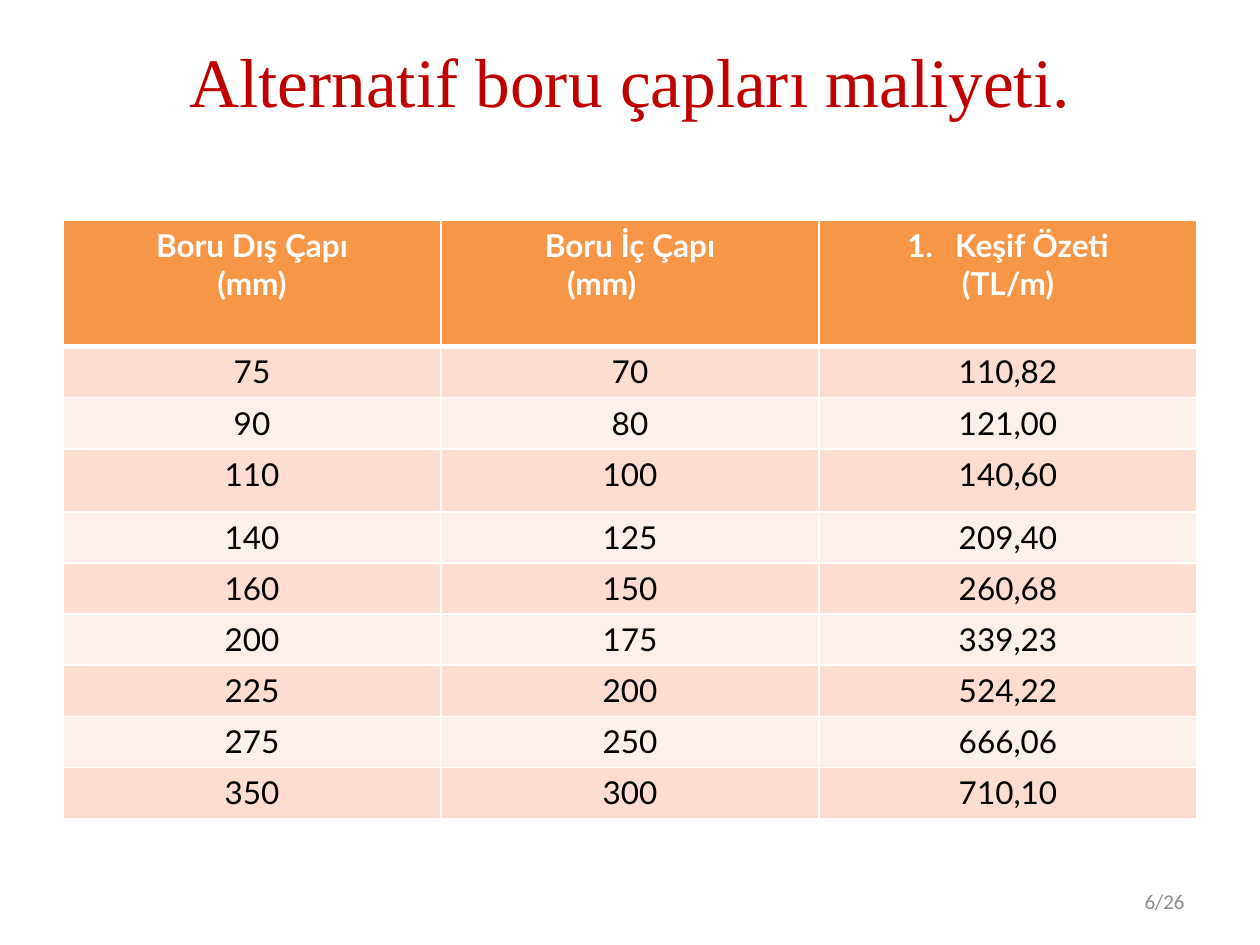
from lxml import etree
from pptx import Presentation, util as u
from pptx.dml.color import RGBColor
from pptx.enum import text
from pptx.oxml import ns

TITLE = "Alternatif boru çapları maliyeti."
PAGE = "6/26"
HEADERS = [
    ("Boru Dış Çapı", "(mm)"),
    ("Boru İç Çapı", "(mm)\t"),
    ("Keşif Özeti", "(TL/m)"),
]
COSTS = [
    ("75", "70", "110,82"),
    ("90", "80", "121,00"),
    ("110", "100", "140,60"),
    ("140", "125", "209,40"),
    ("160", "150", "260,68"),
    ("200", "175", "339,23"),
    ("225", "200", "524,22"),
    ("275", "250", "666,06"),
    ("350", "300", "710,10"),
]
COLORS = {
    "title": "C00000", "header": "F79646", "odd": "FCDDCF", "even": "FDEFE9",
    "white": "FFFFFF", "black": "000000", "page": "8C8C8C",
}
MARGIN, WIDTH = 0.5, 9
TABLE_TOP, TABLE_HEIGHT = 1.75, 4.75
HEADER_HEIGHT, TALL_ROW, TALL_HEIGHT = 1, 3, 0.5
ROW_HEIGHT = (TABLE_HEIGHT - HEADER_HEIGHT - TALL_HEIGHT) / (len(COSTS) - 1)


def rgb(name):
    return RGBColor.from_string(COLORS[name])


def style(p, size, font, color, align, bold=False):
    p.alignment = align
    p.font.size, p.font.name, p.font.bold = u.Pt(size), font, bold
    p.font.color.rgb = rgb(color)


def add_borders(cell, bottom):
    tc_pr = cell._tc.get_or_add_tcPr()
    for side, width in (("L", 1), ("R", 1), ("T", 1), ("B", bottom)):
        ln = etree.SubElement(tc_pr, ns.qn(f"a:ln{side}"), w=str(u.Pt(width)))
        fill = etree.SubElement(ln, ns.qn("a:solidFill"))
        etree.SubElement(fill, ns.qn("a:srgbClr"), val=COLORS["white"])


def number(p):
    p_pr = p._p.get_or_add_pPr()
    p_pr.set("marL", str(u.Inches(0.38)))
    p_pr.set("indent", str(u.Inches(-0.38)))
    etree.SubElement(p_pr, ns.qn("a:buFont"), typeface="+mj-lt")
    etree.SubElement(p_pr, ns.qn("a:buAutoNum"), type="arabicPeriod")


def fill_cell(cell, lines, fill, color, bold, bottom):
    add_borders(cell, bottom)
    cell.fill.solid()
    cell.fill.fore_color.rgb = rgb(fill)
    cell.text_frame.text = "\n".join(lines)
    for p in cell.text_frame.paragraphs:
        style(p, 18, "Lato", color, text.PP_ALIGN.CENTER, bold)


prs = Presentation()
prs.slide_width, prs.slide_height = u.Inches(10), u.Inches(7.5)
s = prs.slides.add_slide(prs.slide_layouts[5])

title = s.shapes.title
title.left, title.top = u.Inches(MARGIN), u.Inches(0.3)
title.width, title.height = u.Inches(WIDTH), u.Inches(1.25)
tf = title.text_frame
tf.text = TITLE
tf.vertical_anchor = text.MSO_ANCHOR.TOP
tf.margin_top = 0
style(tf.paragraphs[0], 39.6, "Times New Roman", "title", text.PP_ALIGN.CENTER)

table = s.shapes.add_table(
    len(COSTS) + 1, len(HEADERS), u.Inches(MARGIN), u.Inches(TABLE_TOP),
    u.Inches(WIDTH), u.Inches(TABLE_HEIGHT)).table
for i, row in enumerate(table.rows):
    height = {0: HEADER_HEIGHT, TALL_ROW: TALL_HEIGHT}.get(i, ROW_HEIGHT)
    row.height = u.Inches(height)
for c, lines in enumerate(HEADERS):
    fill_cell(table.cell(0, c), lines, "header", "white", True, 3)
for r, values in enumerate(COSTS, 1):
    for c, value in enumerate(values):
        fill_cell(table.cell(r, c), [value], "odd" if r % 2 else "even", "black", False, 1)
number(table.cell(0, 2).text_frame.paragraphs[0])

page = s.shapes.add_textbox(u.Inches(7.17), u.Inches(6.95), u.Inches(2.33), u.Inches(0.4))
tf = page.text_frame
tf.word_wrap = True
tf.vertical_anchor = text.MSO_ANCHOR.MIDDLE
tf.text = PAGE
style(tf.paragraphs[0], 12, "Calibri", "page", text.PP_ALIGN.RIGHT)

prs.save("out.pptx")
